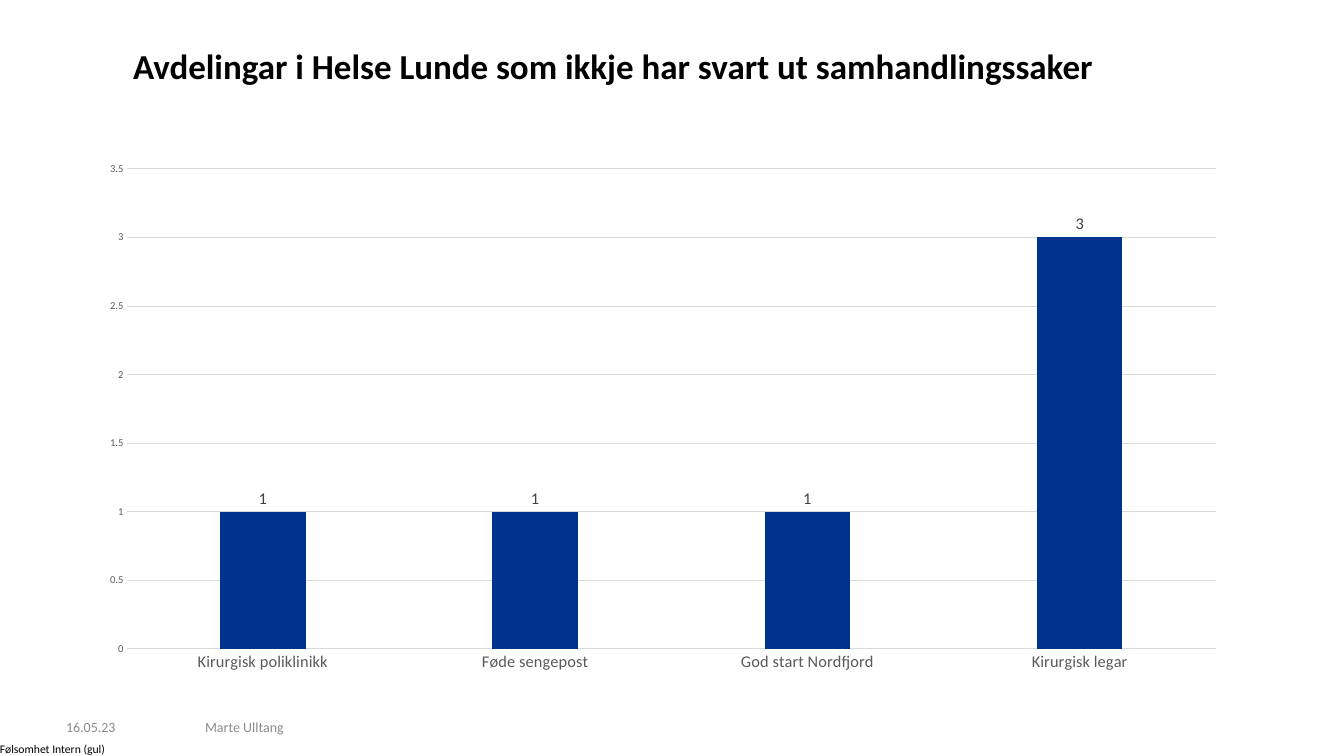
from dataclasses import dataclass

from pptx import Presentation
from pptx.chart.data import CategoryChartData
from pptx.dml.color import RGBColor
from pptx.enum.chart import XL_CHART_TYPE, XL_LABEL_POSITION, XL_TICK_MARK
from pptx.enum.text import MSO_ANCHOR, MSO_AUTO_SIZE, PP_ALIGN
from pptx.util import Emu, Pt

COLUMN = XL_CHART_TYPE.COLUMN_CLUSTERED
OUTER = XL_LABEL_POSITION.OUTSIDE_END
NO_TICK = XL_TICK_MARK.NONE
TOP, MIDDLE = MSO_ANCHOR.TOP, MSO_ANCHOR.MIDDLE
LEFT, CENTER = PP_ALIGN.LEFT, PP_ALIGN.CENTER
NO_FIT = MSO_AUTO_SIZE.NONE

FONT = "Calibri"
SCALE = 914400 / 84
TITLE_ONLY = 5
COLORS = {
    "black": "000000",
    "muted": "8C8C8C",
    "axis": "595959",
    "label": "404040",
    "grid": "D9D9D9",
    "bar": "00338D",
}


@dataclass(frozen=True)
class Box:
    left: int
    top: int
    width: int
    height: int


@dataclass(frozen=True)
class Note:
    text: str
    box: Box
    size: int
    color: str
    anchor: MSO_ANCHOR


TITLE = "Avdelingar i Helse Lunde som ikkje har svart ut samhandlingssaker"
TITLE_BOX = Box(66, 49, 1095, 53)
CHART_BOX = Box(87, 152, 1152, 531)
NOTES = [
    Note("Følsomhet Intern (gul)", Box(0, 742, 108, 14), 10, "black", TOP),
    Note("Marte Ulltang", Box(205, 717, 821, 20), 12, "muted", MIDDLE),
    Note("16.05.23", Box(66, 717, 106, 20), 12, "muted", MIDDLE),
]
COUNTS = {
    "Kirurgisk poliklinikk": 1,
    "Føde sengepost": 1,
    "God start Nordfjord": 1,
    "Kirurgisk legar": 3,
}


def px(count: int) -> Emu:
    return Emu(round(count * SCALE))


def frame(box: Box) -> tuple:
    return px(box.left), px(box.top), px(box.width), px(box.height)


def tint(name: str) -> RGBColor:
    return RGBColor.from_string(COLORS[name])


def style(font, size: int, color: str, bold: bool = False) -> None:
    font.name = FONT
    font.size = Pt(size)
    font.bold = bold
    font.color.rgb = tint(color)


def write(shape, text: str, *, size: int, color: str, bold: bool = False,
          align: PP_ALIGN = LEFT, anchor: MSO_ANCHOR = TOP,
          wrap: bool = True, pitch: int | None = None) -> None:
    body = shape.text_frame
    body.auto_size = NO_FIT
    body.word_wrap = wrap
    body.vertical_anchor = anchor
    body.margin_left = body.margin_right = 0
    body.margin_top = body.margin_bottom = 0
    line = body.paragraphs[0]
    line.alignment = align
    if pitch:
        line.line_spacing = Pt(pitch)
    run = line.add_run()
    run.text = text
    style(run.font, size, color, bold)


def add_title(slide) -> None:
    title = slide.shapes.title
    title.left, title.top, title.width, title.height = frame(TITLE_BOX)
    write(title, TITLE, size=30, color="black", bold=True,
          align=CENTER, pitch=32)


def add_note(slide, note: Note) -> None:
    shape = slide.shapes.add_textbox(*frame(note.box))
    write(shape, note.text, size=note.size, color=note.color,
          anchor=note.anchor, wrap=note.anchor == MIDDLE)


def set_axis(axis, size: int) -> None:
    axis.major_tick_mark = axis.minor_tick_mark = NO_TICK
    style(axis.tick_labels.font, size, "axis")


def set_line(line) -> None:
    line.color.rgb = tint("grid")
    line.width = Pt(0.75)


def add_bars(slide) -> None:
    data = CategoryChartData()
    data.categories = list(COUNTS)
    data.add_series("Series 1", list(COUNTS.values()))
    chart = slide.shapes.add_chart(COLUMN, *frame(CHART_BOX), data).chart
    chart.has_title = False
    chart.has_legend = False
    style(chart.font, 10, "black")

    base, side = chart.category_axis, chart.value_axis
    set_axis(base, 14)
    set_line(base.format.line)
    set_axis(side, 9)
    side.format.line.fill.background()
    side.minimum_scale, side.maximum_scale = 0, 3.5
    side.major_unit = 0.5
    side.has_major_gridlines = True
    set_line(side.major_gridlines.format.line)

    plot = chart.plots[0]
    plot.gap_width = 219
    plot.overlap = -27
    plot.vary_by_categories = False
    bars = plot.series[0]
    bars.format.fill.solid()
    bars.format.fill.fore_color.rgb = tint("bar")
    labels = bars.data_labels
    labels.show_value = True
    labels.position = OUTER
    style(labels.font, 14, "label")


def main() -> None:
    deck = Presentation()
    deck.slide_width, deck.slide_height = px(1344), px(756)
    slide = deck.slides.add_slide(deck.slide_layouts[TITLE_ONLY])
    add_title(slide)
    for note in NOTES:
        add_note(slide, note)
    add_bars(slide)
    deck.save("out.pptx")


if __name__ == "__main__":
    main()
